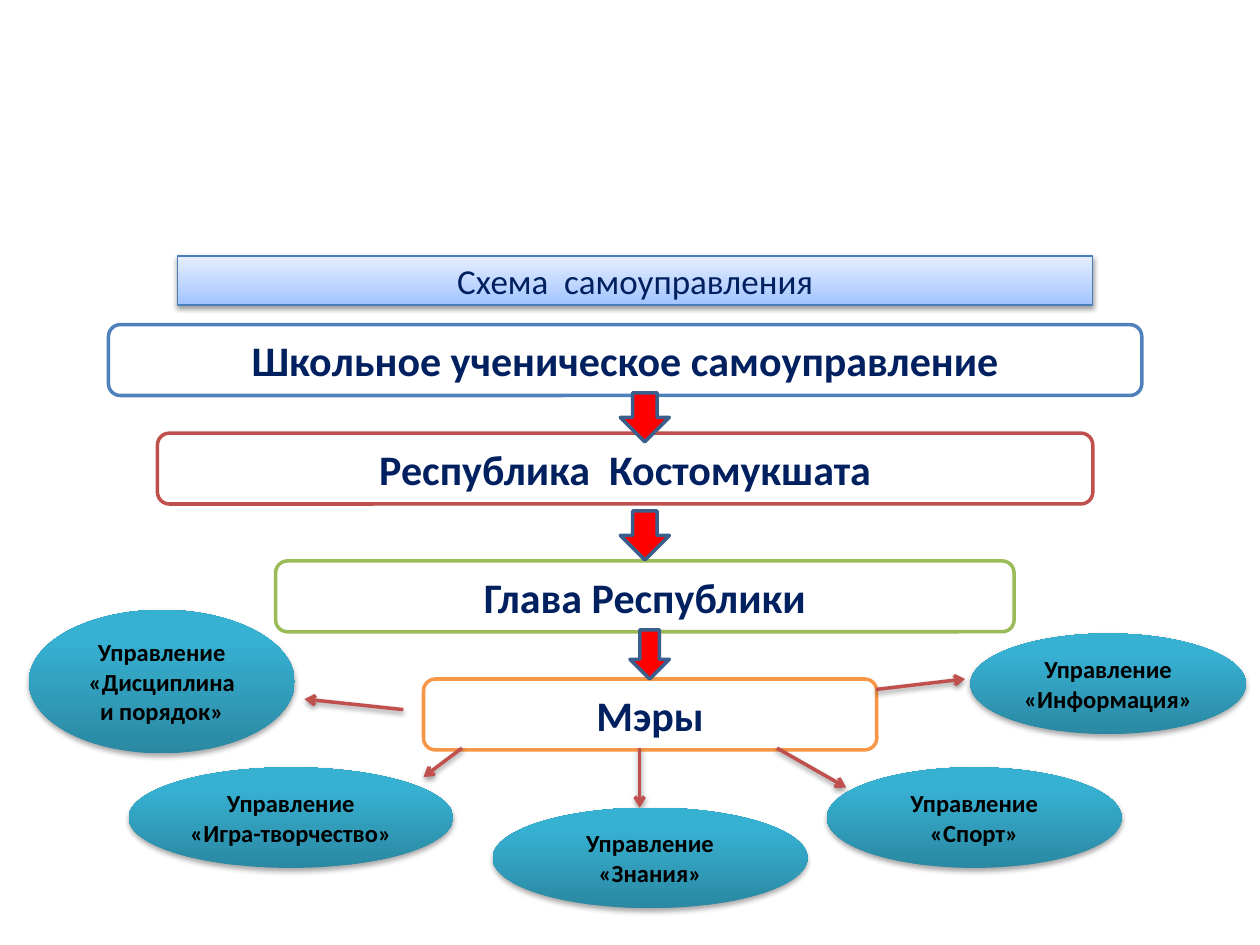
from lxml.etree import SubElement
from pptx import Presentation
from pptx.dml.color import RGBColor
from pptx.enum.shapes import MSO_CONNECTOR, MSO_SHAPE
from pptx.enum.text import MSO_ANCHOR, MSO_AUTO_SIZE, PP_ALIGN
from pptx.oxml.ns import qn
from pptx.util import Pt

NAVY = RGBColor(0x00, 0x20, 0x60)
BLACK = RGBColor(0x00, 0x00, 0x00)
WHITE = RGBColor(0xFF, 0xFF, 0xFF)
RED = RGBColor(0xFF, 0x00, 0x00)
STEEL = RGBColor(0x3A, 0x5F, 0x8C)
BLUE = RGBColor(0x4F, 0x81, 0xBD)
BRICK = RGBColor(0xC0, 0x50, 0x4D)
GREEN = RGBColor(0x9B, 0xBB, 0x59)
ORANGE = RGBColor(0xF7, 0x96, 0x46)
TITLE_EDGE = RGBColor(0x4A, 0x7E, 0xBB)
PALE_BLUE = RGBColor(0xE5, 0xEE, 0xFF)
SKY = RGBColor(0xA3, 0xC4, 0xFF)
DEEP_TEAL = RGBColor(0x2A, 0x88, 0xA2)
TEAL = RGBColor(0x37, 0xB1, 0xD2)

TITLE_FONT = {"name": "Calibri", "size": Pt(20), "bold": False}
LEVEL_FONT = {"name": "Calibri", "size": Pt(24), "bold": True}
DEPARTMENT_FONT = {"name": "Calibri", "size": Pt(14), "bold": True}

LEVEL_HEIGHT = 40.5
LEVELS = [
    ("Школьное ученическое самоуправление", BLUE, 0, 0, 590.5),
    ("Республика  Костомукшата", BRICK, 28, 62, 534.5),
    ("Глава Республики", GREEN, 95.5, 135, 422),
    ("Мэры", ORANGE, 180, 202.5, 259),
]
LEVEL_ARROWS = [(292.5, 39, 28), (292.5, 106.5, 28), (298, 174.5, 22.5)]

DEPARTMENTS = [
    (["Управление «Дисциплина и порядок»"], (0, 0, 152, 82), (214, 57, 157.5, 51)),
    (["Управление", "«Игра-творчество»"], (57, 90, 185.5, 57.5), (247.5, 79, 225.5, 95.5)),
    (["Управление «Знания»"], (265, 113, 180, 57.5), (349, 79, 349, 113)),
    (["Управление «Спорт»"], (456, 90, 168.5, 57.5), (427.5, 79, 467, 101.5)),
    (["Управление «Информация»"], (538, 13.5, 157.5, 57.5), (484, 45.5, 535, 39.5)),
]


def add_effects(shape, opacity=None):
    """Replace theme effects with none, or with a soft shadow below."""
    effects = SubElement(shape._element.spPr, qn("a:effectLst"))
    if opacity:
        shadow = SubElement(effects, qn("a:outerShdw"), blurRad=str(Pt(3.1)),
                            dist=str(Pt(1.7)), dir="5400000", rotWithShape="0")
        color = SubElement(shadow, qn("a:srgbClr"), val=str(BLACK))
        SubElement(color, qn("a:alpha"), val=str(opacity * 1000))


def set_outline(line, color, width):
    """Give a line its colour and its width in points."""
    line.color.rgb = color
    line.width = Pt(width)


def set_gradient(fill, bottom, top, top_position):
    """Fill with a vertical gradient that starts at the bottom."""
    fill.gradient()
    fill.gradient_angle = 90
    for stop, color, position in zip(fill.gradient_stops, (bottom, top), (0, top_position)):
        stop.color.rgb = color
        stop.position = position


def write_text(frame, lines, font_format, color):
    """Write centred paragraphs in one format."""
    frame.text = "\n".join(lines)
    frame.vertical_anchor = MSO_ANCHOR.MIDDLE
    for paragraph in frame.paragraphs:
        paragraph.alignment = PP_ALIGN.CENTER
        for run in paragraph.runs:
            for attribute, value in font_format.items():
                setattr(run.font, attribute, value)
            run.font.color.rgb = color


def draw_title(slide, left, top, width, height):
    """Place the title bar in its box."""
    title = slide.shapes.title
    title.left, title.top, title.width, title.height = map(Pt, (left, top, width, height))
    set_gradient(title.fill, SKY, PALE_BLUE, 1)
    set_outline(title.line, TITLE_EDGE, 0.75)
    add_effects(title, 38)
    write_text(title.text_frame, ["Схема  самоуправления"], TITLE_FONT, NAVY)
    title.text_frame.word_wrap = False
    title.text_frame.auto_size = MSO_AUTO_SIZE.NONE


def draw_levels(slide, left, top):
    """Stack the levels of government and the arrows between them."""
    for name, edge, dx, dy, width in LEVELS:
        level = slide.shapes.add_shape(MSO_SHAPE.ROUNDED_RECTANGLE, Pt(left + dx),
                                       Pt(top + dy), Pt(width), Pt(LEVEL_HEIGHT))
        level.fill.solid()
        level.fill.fore_color.rgb = WHITE
        set_outline(level.line, edge, 2)
        add_effects(level)
        write_text(level.text_frame, [name], LEVEL_FONT, NAVY)
    for dx, dy, width in LEVEL_ARROWS:
        arrow = slide.shapes.add_shape(MSO_SHAPE.DOWN_ARROW, Pt(left + dx),
                                       Pt(top + dy), Pt(width), Pt(28))
        arrow.fill.solid()
        arrow.fill.fore_color.rgb = RED
        set_outline(arrow.line, STEEL, 2)
        add_effects(arrow)


def draw_departments(slide, left, top):
    """Fan the departments out from the mayors, each with its arrow."""
    for lines, (dx, dy, width, height), (x1, y1, x2, y2) in DEPARTMENTS:
        link = slide.shapes.add_connector(MSO_CONNECTOR.STRAIGHT, Pt(left + x1),
                                          Pt(top + y1), Pt(left + x2), Pt(top + y2))
        set_outline(link.line, BRICK, 2)
        SubElement(link.line._get_or_add_ln(), qn("a:tailEnd"), type="arrow")
        add_effects(link, 38)

        department = slide.shapes.add_shape(MSO_SHAPE.OVAL, Pt(left + dx), Pt(top + dy),
                                            Pt(width), Pt(height))
        set_gradient(department.fill, DEEP_TEAL, TEAL, 0.8)
        department.line.fill.background()
        add_effects(department, 35)
        write_text(department.text_frame, lines, DEPARTMENT_FONT, BLACK)


def main():
    """Build and save the slide."""
    presentation = Presentation()
    presentation.slide_width, presentation.slide_height = Pt(720), Pt(540)
    slide = presentation.slides.add_slide(presentation.slide_layouts[5])
    draw_title(slide, 101.5, 146.25, 523, 28)
    draw_levels(slide, 62, 185.5)
    draw_departments(slide, 16.5, 348.5)
    presentation.save("out.pptx")


if __name__ == "__main__":
    main()
